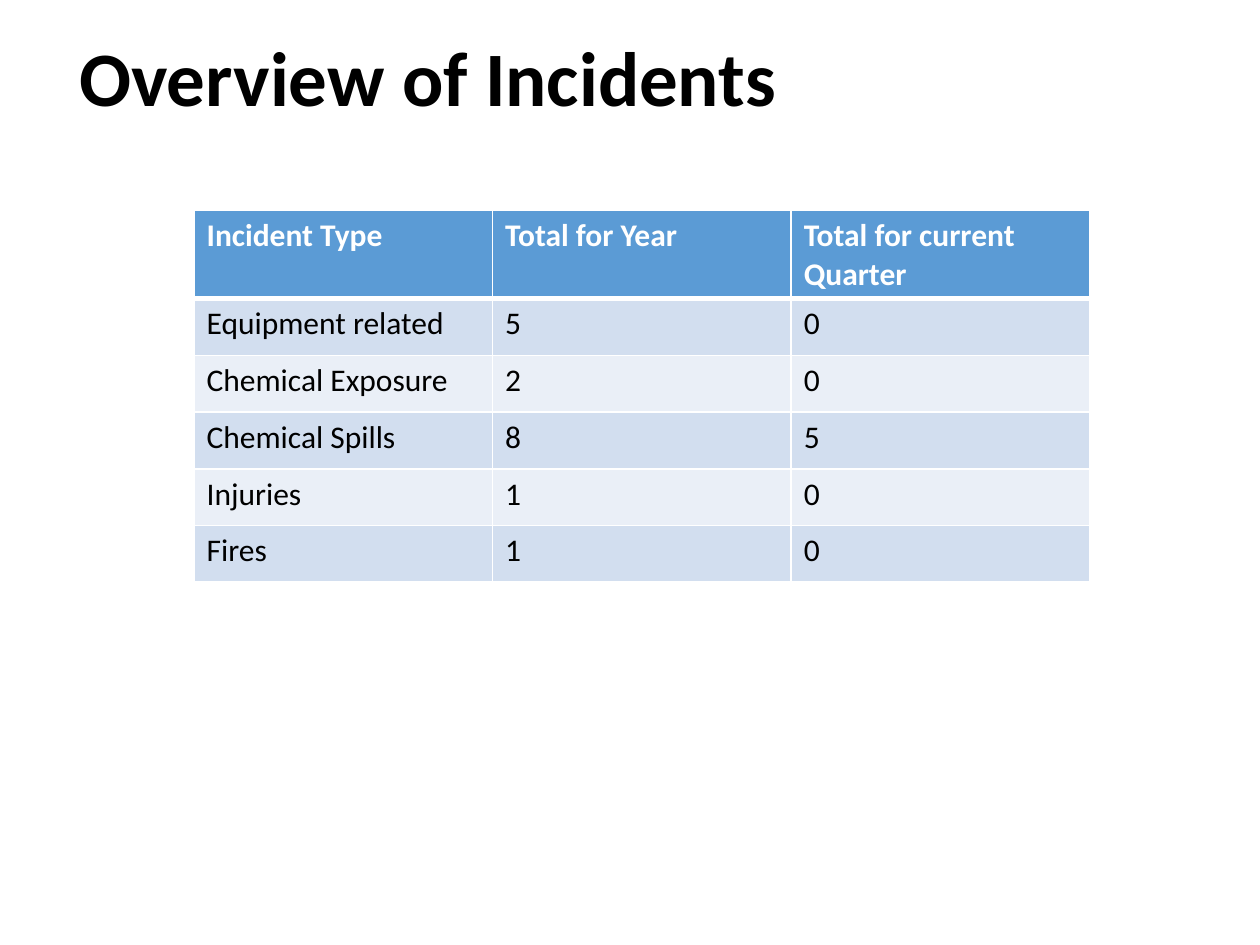
from lxml import etree
from pptx import Presentation
from pptx.dml.color import RGBColor
from pptx.enum.text import MSO_ANCHOR
from pptx.oxml.ns import qn
from pptx.util import Inches, Pt

MIDDLE = MSO_ANCHOR.MIDDLE
BLACK = RGBColor(0x00, 0x00, 0x00)
WHITE = RGBColor(0xFF, 0xFF, 0xFF)
HEADER_BLUE = RGBColor(0x5B, 0x9B, 0xD5)
BAND_COLORS = (RGBColor(0xD2, 0xDE, 0xEF), RGBColor(0xEA, 0xEF, 0xF7))
FONT = "Calibri"
COLUMN_WIDTH = Inches(2.37)
HEADER_HEIGHT = Inches(0.69)
ROW_HEIGHT = Inches(0.45)
THIN, THICK = Pt(1), Pt(3)
INCIDENTS = (
    ("Incident Type", "Total for Year", "Total for current Quarter"),
    ("Equipment related", "5", "0"),
    ("Chemical Exposure", "2", "0"),
    ("Chemical Spills", "8", "5"),
    ("Injuries", "1", "0"),
    ("Fires", "1", "0"),
)


def format_text(paragraph, size, color, bold):
    for run in paragraph.runs:
        run.font.name = FONT
        run.font.size = Pt(size)
        run.font.bold = bold
        run.font.color.rgb = color


def add_title(slide, text):
    box = slide.shapes.add_textbox(Inches(0.53), Inches(0.15), Inches(8.62), Inches(1))
    frame = box.text_frame
    frame.word_wrap = True
    frame.vertical_anchor = MIDDLE
    frame.text = text
    paragraph = frame.paragraphs[0]
    paragraph.line_spacing = 0.9
    format_text(paragraph, 44, BLACK, True)


def set_borders(cell, top, bottom):
    properties = cell._tc.get_or_add_tcPr()
    widths = {"a:lnL": THIN, "a:lnR": THIN, "a:lnT": top, "a:lnB": bottom}
    for tag, width in widths.items():
        line = etree.SubElement(properties, qn(tag), w=str(width))
        fill = etree.SubElement(line, qn("a:solidFill"))
        etree.SubElement(fill, qn("a:srgbClr"), val=str(WHITE))


def style_cell(cell, row):
    is_header = row == 0
    set_borders(cell, THICK if row == 1 else THIN, THICK if is_header else THIN)
    cell.fill.solid()
    cell.fill.fore_color.rgb = HEADER_BLUE if is_header else BAND_COLORS[(row - 1) % 2]
    color = WHITE if is_header else BLACK
    format_text(cell.text_frame.paragraphs[0], 18, color, is_header)


def add_incident_table(slide, rows):
    column_count = len(rows[0])
    height = HEADER_HEIGHT + ROW_HEIGHT * (len(rows) - 1)
    table = slide.shapes.add_table(
        len(rows), column_count, Inches(1.54), Inches(1.67),
        COLUMN_WIDTH * column_count, height,
    ).table
    for row, values in enumerate(rows):
        table.rows[row].height = ROW_HEIGHT if row else HEADER_HEIGHT
        for column, value in enumerate(values):
            cell = table.cell(row, column)
            cell.text = value
            style_cell(cell, row)


def main():
    presentation = Presentation()
    presentation.slide_width = Inches(10)
    presentation.slide_height = Inches(7.5)
    slide = presentation.slides.add_slide(presentation.slide_layouts[6])
    add_title(slide, "Overview of Incidents")
    add_incident_table(slide, INCIDENTS)
    presentation.save("out.pptx")


if __name__ == "__main__":
    main()
